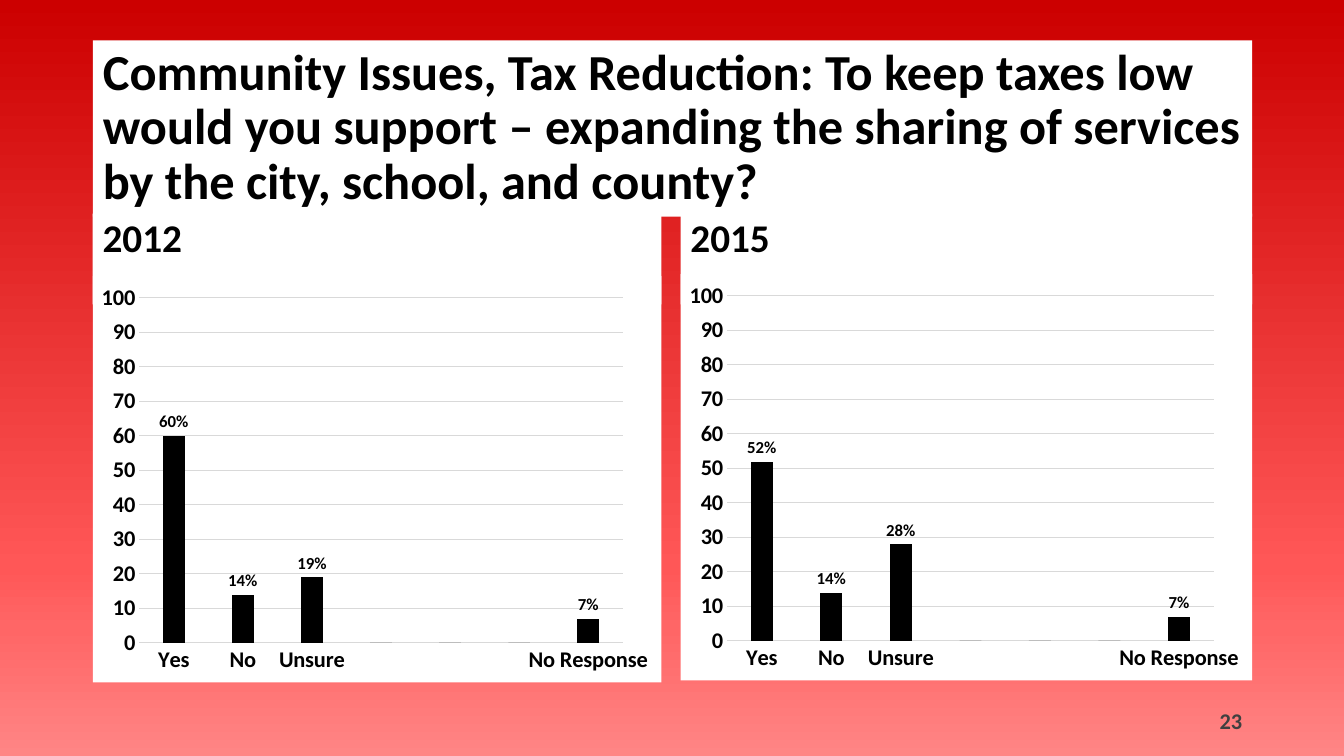
from pptx import Presentation
from pptx.chart.data import CategoryChartData
from pptx.dml.color import RGBColor
from pptx.enum.chart import XL_CHART_TYPE as ChartType, XL_LABEL_POSITION as LabelPosition
from pptx.enum.chart import XL_TICK_MARK as TickMark
from pptx.enum.text import MSO_ANCHOR as Anchor, PP_ALIGN as Align
from pptx.oxml import parse_xml
from pptx.oxml.ns import nsdecls
from pptx.util import Inches, Pt

TITLE = ("Community Issues, Tax Reduction: To keep taxes low would you support – "
         "expanding the sharing of services by the city, school, and county?")
ANSWERS = ["Yes", "No", "Unsure", "", "", "", "No Response"]
# year, percentages, left, width, chart top
PANELS = [
    ("2012", [60, 14, 19, 0, 0, 0, 7], 0.92, 5.64, 2.74),
    ("2015", [52, 14, 28, 0, 0, 0, 7], 6.75, 5.67, 2.72),
]
PAGE_NUMBER = "23"
BACKGROUND_STOPS = [(0, "CC0000"), (75, "FF5757"), (83, "FF6666"), (100, "FF8585")]

FONT = "Calibri"
BLACK = RGBColor(0x00, 0x00, 0x00)
WHITE = RGBColor(0xFF, 0xFF, 0xFF)
GRID_GRAY = RGBColor(0xD9, 0xD9, 0xD9)
NUMBER_GRAY = RGBColor(0x40, 0x40, 0x40)

LEFT, CONTENT_WIDTH = 0.92, 11.5
TITLE_TOP, TITLE_HEIGHT = 0.4, 1.75
YEAR_TOP, YEAR_HEIGHT = 2.12, 0.9
CHART_HEIGHT = 4.03
NUMBER_WIDTH = 3


def style_font(font, size, color=BLACK):
    font.name, font.size, font.bold = FONT, Pt(size), True
    font.color.rgb = color


def place(shape, left, top, width, height):
    shape.left, shape.top = Inches(left), Inches(top)
    shape.width, shape.height = Inches(width), Inches(height)


def write(shape, text, size, anchor, color=BLACK):
    frame = shape.text_frame
    frame.word_wrap = True
    frame.vertical_anchor = anchor
    paragraph = frame.paragraphs[0]
    paragraph.text = text
    style_font(paragraph.font, size, color)
    return paragraph


def fill_white(shape):
    shape.fill.solid()
    shape.fill.fore_color.rgb = WHITE


def paint_background(slide):
    fill = slide.background.fill
    fill.gradient()
    fill.gradient_angle = 270
    stops = "".join(f'<a:gs pos="{share * 1000}"><a:srgbClr val="{color}"/></a:gs>'
                    for share, color in BACKGROUND_STOPS)
    stop_list = slide.element.xpath(".//p:bg//a:gsLst")[0]
    stop_list.getparent().replace(
        stop_list, parse_xml(f'<a:gsLst {nsdecls("a")}>{stops}</a:gsLst>'))


def add_year_box(slide, year, left, width):
    box = slide.shapes.add_textbox(0, 0, 0, 0)
    place(box, left, YEAR_TOP, width, YEAR_HEIGHT)
    fill_white(box)
    write(box, year, 28, Anchor.TOP).line_spacing = 0.9


def add_answer_chart(slide, values, left, top, width):
    data = CategoryChartData()
    data.categories = ANSWERS
    data.add_series("Series 1", values)
    chart = slide.shapes.add_chart(
        ChartType.COLUMN_CLUSTERED, Inches(left), Inches(top),
        Inches(width), Inches(CHART_HEIGHT), data).chart
    chart.has_legend = chart.has_title = False
    chart.font.name, chart.font.size = FONT, Pt(10)
    chart.element.find("{*}chart").addnext(parse_xml(
        f'<c:spPr {nsdecls("c", "a")}><a:solidFill><a:srgbClr val="{WHITE}"/></a:solidFill>'
        '<a:ln><a:noFill/></a:ln></c:spPr>'))

    for axis in (chart.category_axis, chart.value_axis):
        axis.major_tick_mark = axis.minor_tick_mark = TickMark.NONE
        style_font(axis.tick_labels.font, 16)
    value_axis = chart.value_axis
    value_axis.minimum_scale, value_axis.maximum_scale, value_axis.major_unit = 0, 100, 10
    value_axis.format.line.fill.background()
    for line in (chart.category_axis.format.line, value_axis.major_gridlines.format.line):
        line.color.rgb = GRID_GRAY
        line.width = Pt(0.75)

    plot = chart.plots[0]
    plot.vary_by_categories = False
    plot.gap_width, plot.overlap = 219, -27
    bars = plot.series[0].format.fill
    bars.solid()
    bars.fore_color.rgb = BLACK
    plot.has_data_labels = True
    labels = plot.data_labels
    labels.show_value = True
    labels.position = LabelPosition.OUTSIDE_END
    labels.number_format = '0"%";;'  # zeros stay unlabelled
    labels.number_format_is_linked = False
    style_font(labels.font, 12)


def main():
    presentation = Presentation()
    presentation.slide_width, presentation.slide_height = Inches(13.33), Inches(7.5)
    slide = presentation.slides.add_slide(presentation.slide_layouts[5])
    paint_background(slide)

    title = slide.shapes.title
    place(title, LEFT, TITLE_TOP, CONTENT_WIDTH, TITLE_HEIGHT)
    fill_white(title)
    heading = write(title, TITLE, 36, Anchor.MIDDLE)
    heading.alignment, heading.line_spacing = Align.LEFT, 0.9

    for year, values, left, width, chart_top in PANELS:
        add_year_box(slide, year, left, width)
        add_answer_chart(slide, values, left, chart_top, width)

    number = slide.shapes.add_textbox(0, 0, 0, 0)
    place(number, LEFT + CONTENT_WIDTH - NUMBER_WIDTH, 6.95, NUMBER_WIDTH, 0.4)
    write(number, PAGE_NUMBER, 16, Anchor.MIDDLE, NUMBER_GRAY).alignment = Align.RIGHT

    presentation.save("out.pptx")


if __name__ == "__main__":
    main()
